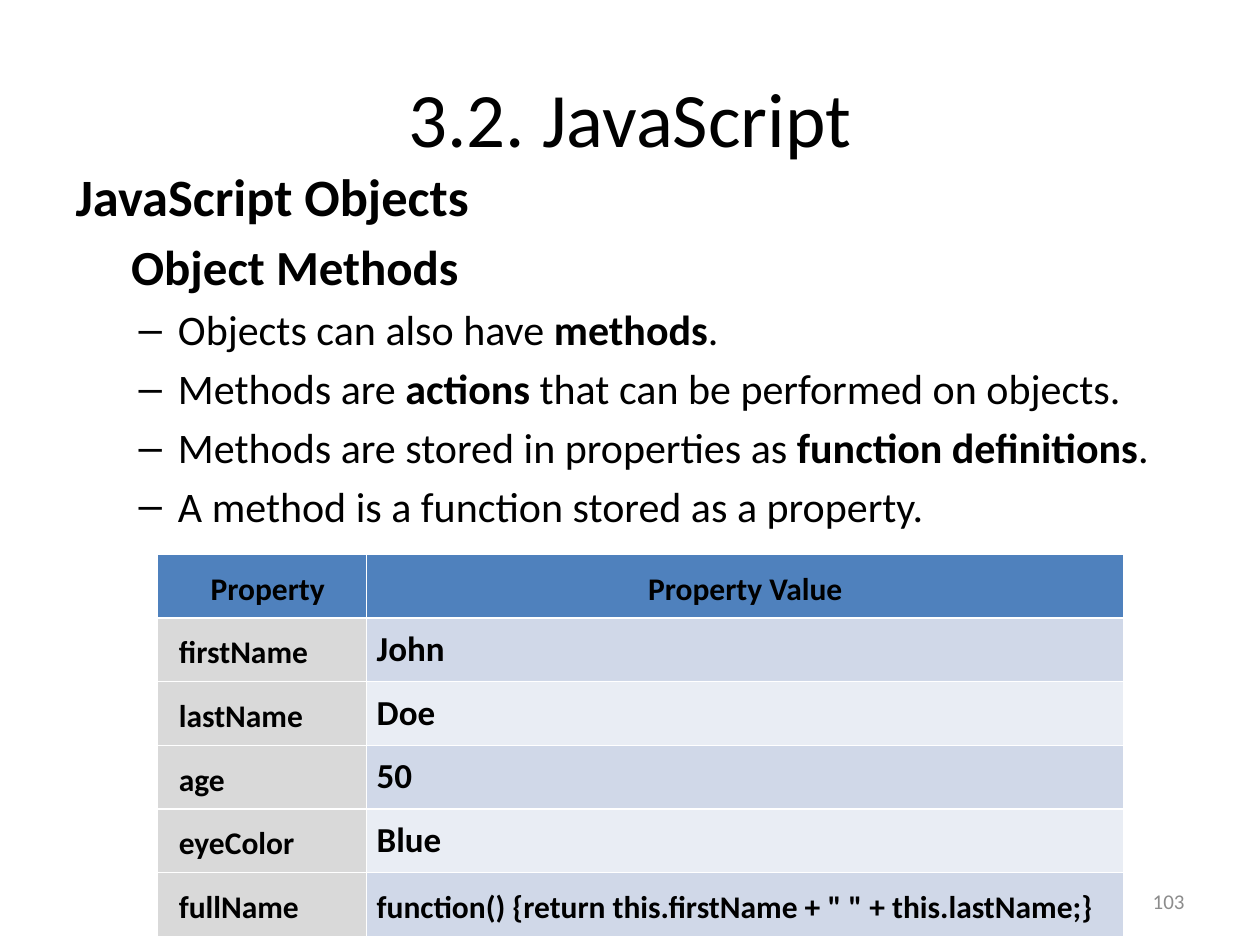
"""Build the JavaScript object methods slide."""
from dataclasses import dataclass

from lxml.etree import SubElement
from pptx import Presentation
from pptx.dml.color import RGBColor
from pptx.enum.text import MSO_ANCHOR, PP_ALIGN
from pptx.oxml.ns import qn
from pptx.util import Inches, Pt


@dataclass(frozen=True)
class Theme:
    font: str = "Calibri"
    text: str = "000000"
    muted: str = "8C8C8C"
    header: str = "4F81BD"
    name: str = "D9D9D9"
    bands: tuple = ("D0D8E8", "E9EDF4")
    title: int = 44
    heading: int = 30
    subheading: int = 28
    bullet: int = 24
    value: int = 20
    cell: int = 18
    number: int = 12


theme = Theme()


def add_run(p, text, size, bold=False, color=theme.text):
    r = p.add_run()
    r.text = text
    r.font.name = theme.font
    r.font.size = Pt(size)
    r.font.bold = bold
    r.font.color.rgb = RGBColor.from_string(color)


def place(sp, left, top, width, height):
    sp.left, sp.top = Inches(left), Inches(top)
    sp.width, sp.height = Inches(width), Inches(height)


prs = Presentation()
prs.slide_width, prs.slide_height = Inches(10), Inches(7.5)
s = prs.slides.add_slide(prs.slide_layouts[1])

title, body = s.placeholders
place(title, 0.5, 0.3, 9, 1.25)
add_run(title.text_frame.paragraphs[0], "3.2. JavaScript", theme.title)

place(body, 0.5, 1.25, 9, 4.95)
tf = body.text_frame
headings = [
    ("JavaScript Objects", 0, 0, theme.heading),
    ("Object Methods", 1, 0.44, theme.subheading),
]
for i, (text, level, margin, size) in enumerate(headings):
    p = tf.add_paragraph() if i else tf.paragraphs[0]
    p.level = level
    pPr = p._p.get_or_add_pPr()
    pPr.set("marL", str(Inches(margin)))
    pPr.set("indent", "0")
    SubElement(pPr, qn("a:buNone"))
    add_run(p, text, size, bold=True)

bullets = [
    ("Objects can also have ", "methods", "."),
    ("Methods are ", "actions", " that can be performed on objects."),
    ("Methods are stored in properties as ", "function definitions", "."),
    ("A method is a function stored as a property.",),
]
for parts in bullets:
    p = tf.add_paragraph()
    p.level = 1
    for i, text in enumerate(parts):
        add_run(p, text, theme.bullet, bold=i == 1)

number = s.shapes.add_textbox(Inches(7.17), Inches(6.95), Inches(2.33), Inches(0.4))
tf = number.text_frame
tf.word_wrap = True
tf.vertical_anchor = MSO_ANCHOR.MIDDLE
p = tf.paragraphs[0]
p.alignment = PP_ALIGN.RIGHT
add_run(p, "103", theme.number, color=theme.muted)

rows = [
    ("Property", "Property Value"),
    ("firstName", "John"),
    ("lastName", "Doe"),
    ("age", "50"),
    ("eyeColor", "Blue"),
    ("fullName", 'function() {return this.firstName + " " + this.lastName;}'),
]
table = s.shapes.add_table(
    len(rows), 2, Inches(1.25), Inches(4.4), Inches(7.67), Inches(2.8)
).table
for column, width in zip(table.columns, (1.66, 6.01)):
    column.width = Inches(width)

for i, row in enumerate(rows):
    for j, text in enumerate(row):
        cell = table.cell(i, j)
        cell.margin_left = Inches(0.08 if j else 0.17)
        cell.margin_top = cell.margin_right = cell.margin_bottom = Inches(0.08)
        fill = theme.bands[(i - 1) % 2] if j else theme.name
        cell.fill.solid()
        cell.fill.fore_color.rgb = RGBColor.from_string(fill if i else theme.header)
        p = cell.text_frame.paragraphs[0]
        p.alignment = PP_ALIGN.LEFT if i else PP_ALIGN.CENTER
        plain_value = j == 1 and 0 < i < len(rows) - 1
        if not plain_value:
            p.line_spacing = 1.15
        add_run(p, text, theme.value if plain_value else theme.cell, bold=True)

prs.save("out.pptx")
